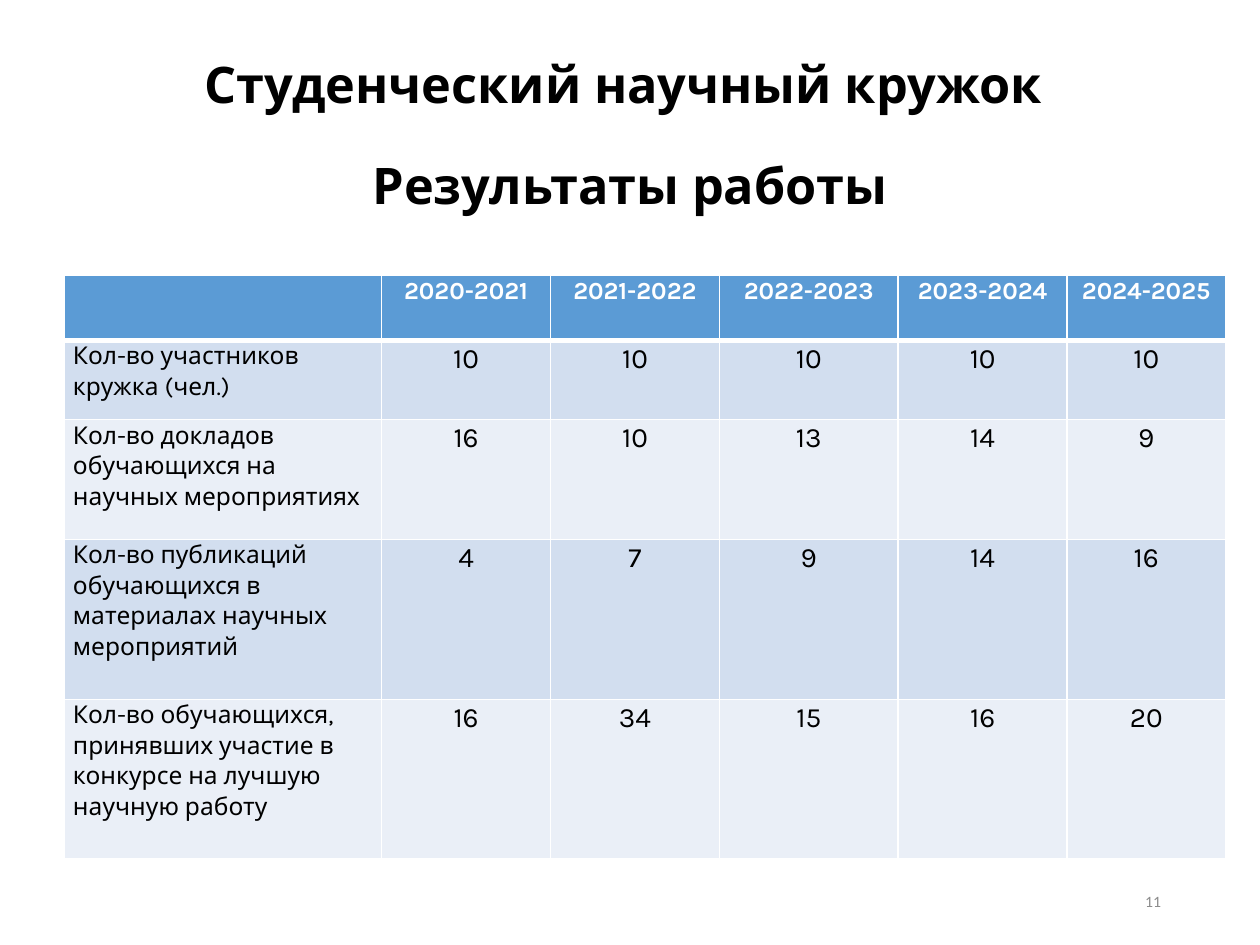
from dataclasses import dataclass

from lxml import etree
from pptx import Presentation
from pptx import util as u
from pptx.dml.color import RGBColor
from pptx.enum import text
from pptx.oxml import ns


@dataclass(frozen=True)
class Theme:
    font: str = "Karla"
    number_font: str = "Calibri"
    ink: str = "000000"
    white: str = "FFFFFF"
    grey: str = "8C8C8C"
    header: str = "5B9BD5"
    bands: tuple = ("D2DEEF", "EAEFF7")
    title_size: float = 28.8
    label_size: float = 14
    value_size: float = 16
    number_size: float = 9


class ReportSlide:
    """Holds the theme and the current slide, and draws each kind of element."""

    def __init__(self, slide, theme):
        self.slide = slide
        self.theme = theme

    def style(self, paragraph, size, color, align, bold=False, font=None, spacing=None):
        paragraph.alignment = align
        paragraph.line_spacing = spacing
        for run in paragraph.runs:
            run.font.name = font or self.theme.font
            run.font.size = u.Pt(size)
            run.font.bold = bold
            run.font.color.rgb = RGBColor.from_string(color)

    def box(self, place, content):
        frame = self.slide.shapes.add_textbox(*map(u.Pt, place)).text_frame
        frame.word_wrap = True
        frame.vertical_anchor = text.MSO_ANCHOR.MIDDLE
        frame.text = content
        return frame

    def title(self, place, lines, gap):
        frame = self.box(place, "\n".join(lines))
        frame.margin_top, frame.margin_bottom = u.Pt(0), u.Pt(5.4)
        for line in frame.paragraphs:
            self.style(line, self.theme.title_size, self.theme.ink,
                       text.PP_ALIGN.CENTER, bold=True, spacing=0.9)
        for line in frame.paragraphs[1:]:
            line.space_before = u.Pt(gap)

    def page_number(self, place, number):
        frame = self.box(place, str(number))
        self.style(frame.paragraphs[0], self.theme.number_size, self.theme.grey,
                   text.PP_ALIGN.RIGHT, font=self.theme.number_font)

    def borders(self, cell, widths):
        properties = cell._tc.get_or_add_tcPr()
        for side, width in widths.items():
            line = etree.SubElement(properties, ns.qn(f"a:ln{side}"), w=str(u.Pt(width)))
            fill = etree.SubElement(line, ns.qn("a:solidFill"))
            etree.SubElement(fill, ns.qn("a:srgbClr"), val=self.theme.white)

    def cell(self, cell, content, row, column):
        theme = self.theme
        is_header, is_label = row == 0, column == 0
        cell.margin_left = cell.margin_right = u.Pt(5)
        cell.margin_top = cell.margin_bottom = u.Pt(0)
        self.borders(cell, {"L": 1, "R": 1, "T": 3 if row == 1 else 1,
                            "B": 3 if is_header else 1})
        cell.fill.solid()
        cell.fill.fore_color.rgb = RGBColor.from_string(
            theme.header if is_header else theme.bands[(row - 1) % 2])
        cell.text = str(content)
        self.style(cell.text_frame.paragraphs[0],
                   theme.label_size if is_header or is_label else theme.value_size,
                   theme.white if is_header else theme.ink,
                   text.PP_ALIGN.LEFT if is_label else text.PP_ALIGN.CENTER,
                   bold=is_header, spacing=1.07)

    def table(self, left, top, widths, heights, records):
        table = self.slide.shapes.add_table(
            len(heights), len(widths), u.Pt(left), u.Pt(top),
            u.Pt(sum(widths)), u.Pt(sum(heights))).table
        for column, width in zip(table.columns, widths):
            column.width = u.Pt(width)
        for row, height in zip(table.rows, heights):
            row.height = u.Pt(height)
        for row, record in enumerate(records):
            for column, content in enumerate(record):
                self.cell(table.cell(row, column), content, row, column)


def main():
    deck = Presentation()
    deck.slide_width, deck.slide_height = u.Pt(720), u.Pt(540)
    report = ReportSlide(deck.slides.add_slide(deck.slide_layouts[6]), Theme())

    years = [f"{year}-{year + 1}" for year in range(2020, 2025)]
    results = [
        ("Кол-во участников кружка (чел.)", 10, 10, 10, 10, 10),
        ("Кол-во докладов обучающихся на научных мероприятиях", 16, 10, 13, 14, 9),
        ("Кол-во публикаций обучающихся в материалах научных мероприятий", 4, 7, 9, 14, 16),
        ("Кол-во обучающихся, принявших участие в конкурсе на лучшую научную работу",
         16, 34, 15, 16, 20),
    ]

    report.title((49.5, 28.8, 621, 105.1),
                 ["Студенческий научный кружок ", "Результаты работы"], gap=26.4)
    report.table(36.7, 157, [181.4, 96.5, 96.5, 102.2, 96.5, 90.5],
                 [37.4, 45.4, 68.4, 91.4, 91.4], [["", *years], *results])
    report.page_number((508.5, 500.5, 162, 28.75), 11)
    deck.save("out.pptx")


if __name__ == "__main__":
    main()
